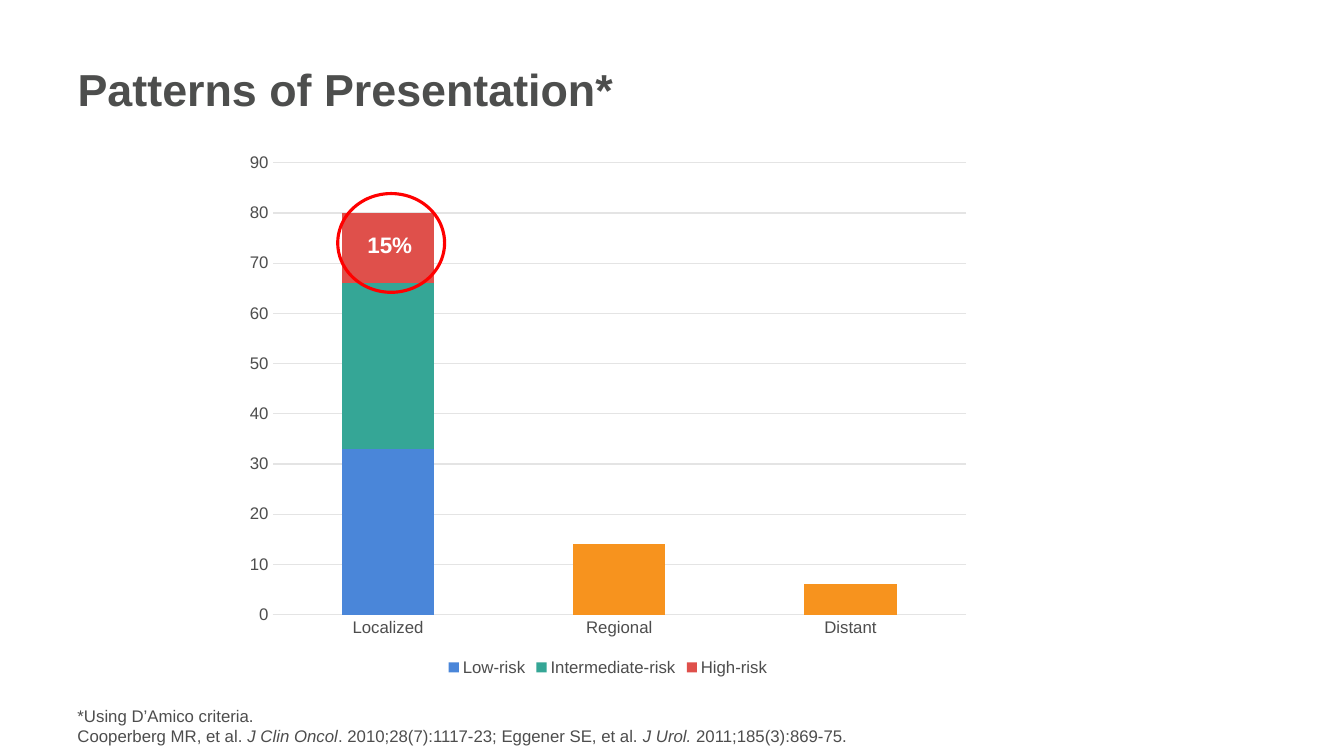
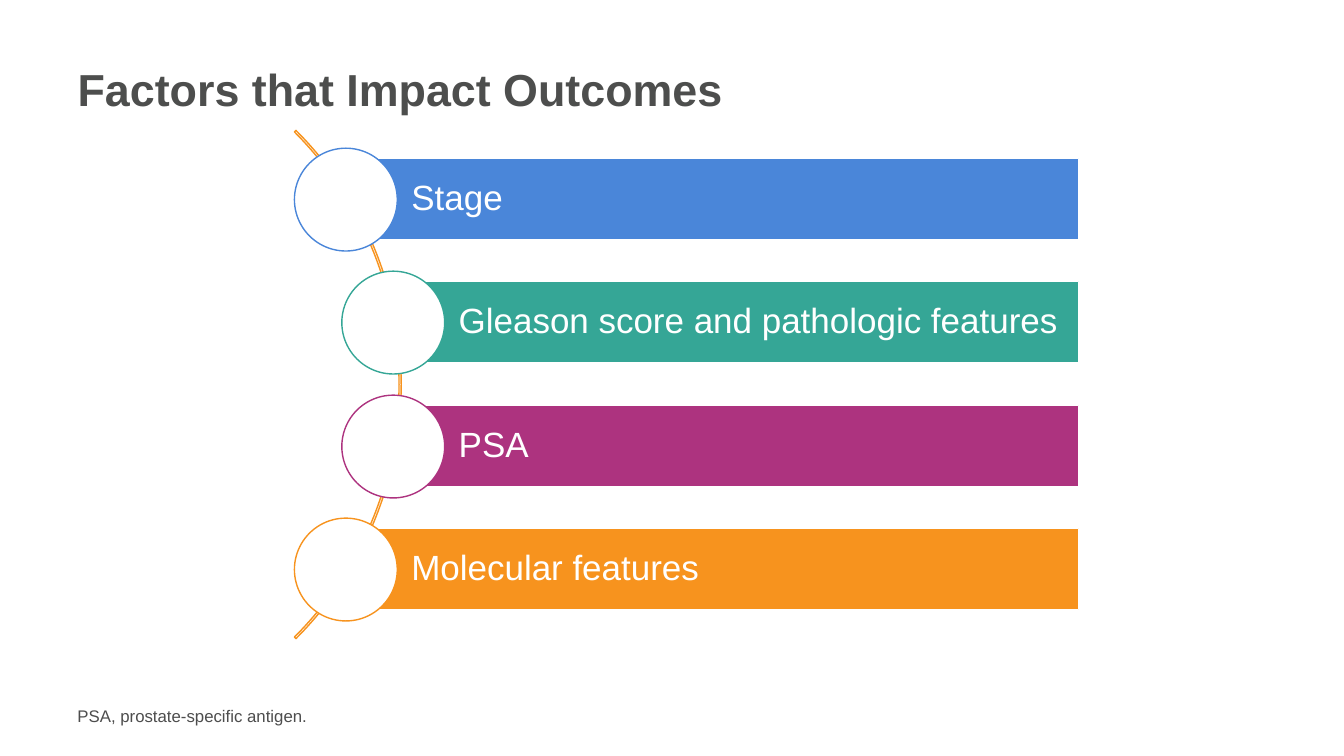
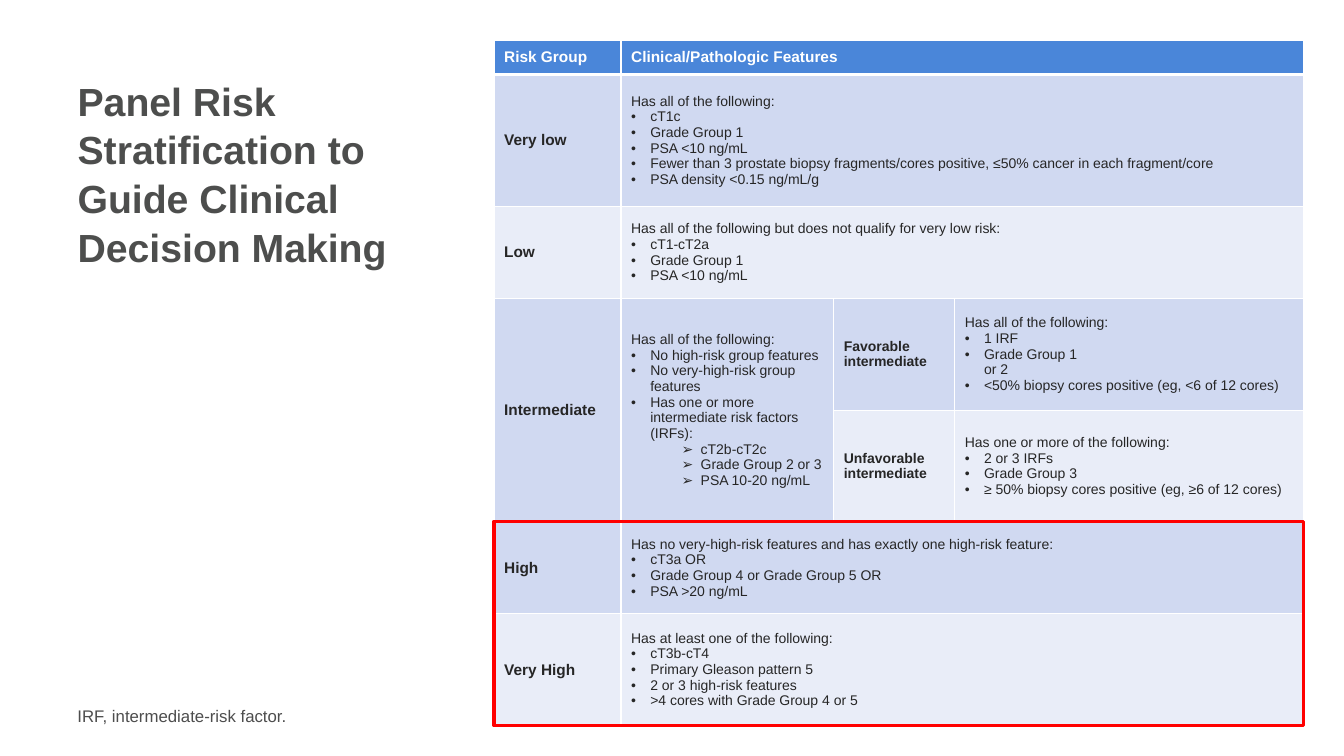
from copy import deepcopy

from pptx import Presentation
from pptx.chart.data import CategoryChartData
from pptx.dml.color import RGBColor
from pptx.enum.chart import XL_CHART_TYPE, XL_LEGEND_POSITION, XL_TICK_MARK
from pptx.enum.shapes import MSO_SHAPE
from pptx.enum.text import MSO_ANCHOR, MSO_AUTO_SIZE, PP_ALIGN
from pptx.oxml.ns import qn
from pptx.oxml.xmlchemy import OxmlElement
from pptx.util import Pt

# Shared look: 100 px to the inch
PX = 9144
FONT = "Arial"
COLORS = {
    "title": "4D4E4D", "text": "4D4D4D", "cell_text": "262626",
    "white": "FFFFFF", "grid": "E4E4E4", "ring": "FF0000",
    "blue": "4A86D9", "green": "35A696", "red": "DF504B",
    "purple": "AD337F", "orange": "F7931E",
    "band_dark": "D0D9F1", "band_light": "E9EDF8",
}
TITLE_BOX = (67, 22, 1175, 130)
NOTE_BOX = (67, 695, 1175, 48)
TITLE_FONT = {"size": 32, "bold": True, "color": "title"}
NOTE_FONT = {"size": 12, "color": "text"}
LABEL_FONT = {"size": 16, "bold": True, "color": "white"}
BAR_FONT = {"size": 25, "color": "white"}
HEAD_FONT = {"size": 11, "bold": True, "color": "white"}
GROUP_FONT = {"size": 11, "bold": True, "color": "cell_text"}
SUBGROUP_FONT = {"size": 10, "bold": True, "color": "cell_text"}
CELL_FONT = {"size": 10, "bold": False, "color": "cell_text"}

# Slide content
CATEGORIES = ("Localized", "Regional", "Distant")
SERIES = (
    ("Low-risk", (33, 14, 6), "blue"),
    ("Intermediate-risk", (33, None, None), "green"),
    ("High-risk", (14, None, None), "red"),
)
FACTORS = (
    ("Stage", 343, "blue"),
    ("Gleason score and pathologic features", 390, "green"),
    ("PSA", 390, "purple"),
    ("Molecular features", 343, "orange"),
)
COLUMN_WIDTHS = (126, 211, 120, 346)
ROW_HEIGHTS = (34, 131, 91, 111, 111, 91, 111)
MERGES = [((row, 1), (row, 3)) for row in (0, 1, 2, 5, 6)]
MERGES += [((3, column), (4, column)) for column in (0, 1)]
LIGHT_CELLS = {(row, column) for row in (2, 6) for column in range(4)}
LIGHT_CELLS |= {(4, 2), (4, 3)}
LABELS = (
    (0, 0, "Risk Group", HEAD_FONT),
    (0, 1, "Clinical/Pathologic Features", HEAD_FONT),
    (1, 0, "Very low", GROUP_FONT),
    (2, 0, "Low", GROUP_FONT),
    (3, 0, "Intermediate", GROUP_FONT),
    (5, 0, "High", GROUP_FONT),
    (6, 0, "Very High", GROUP_FONT),
    (3, 2, "Favorable\nintermediate", SUBGROUP_FONT),
    (4, 2, "Unfavorable\nintermediate", SUBGROUP_FONT),
)
FEATURES = (
    (1, 1, "Has all of the following:",
     ("cT1c", "Grade Group 1", "PSA <10 ng/mL",
      "Fewer than 3 prostate biopsy fragments/cores positive, "
      "≤50% cancer in each fragment/core",
      "PSA density <0.15 ng/mL/g"), ()),
    (2, 1, "Has all of the following but does not qualify for very low risk:",
     ("cT1-cT2a", "Grade Group 1", "PSA <10 ng/mL"), ()),
    (3, 1, "Has all of the following:",
     ("No high-risk group features", "No very-high-risk group features",
      "Has one or more intermediate risk factors (IRFs):"),
     ("cT2b-cT2c", "Grade Group 2 or 3", "PSA 10-20 ng/mL")),
    (3, 3, "Has all of the following:",
     ("1 IRF", "Grade Group 1\vor 2",
      "<50% biopsy cores positive (eg, <6 of 12 cores)"), ()),
    (4, 3, "Has one or more of the following:",
     ("2 or 3 IRFs", "Grade Group 3",
      "≥ 50% biopsy cores positive (eg, ≥6 of 12 cores)"), ()),
    (5, 1, "Has no very-high-risk features and has exactly one high-risk feature:",
     ("cT3a OR", "Grade Group 4 or Grade Group 5 OR", "PSA >20 ng/mL"), ()),
    (6, 1, "Has at least one of the following:",
     ("cT3b-cT4", "Primary Gleason pattern 5", "2 or 3 high-risk features",
      ">4 cores with Grade Group 4 or 5"), ()),
)


# Basic helpers
def color(name):
    return RGBColor.from_string(COLORS[name])


def place(*lengths):
    return [length * PX for length in lengths]


def set_all(target, values):
    for name, value in values.items():
        setattr(target, name, value)


def style_font(font, look):
    values = {**look, "name": FONT, "size": Pt(look["size"])}
    font.color.rgb = color(values.pop("color"))
    set_all(font, values)


def style_line(line, name, width):
    line.color.rgb = color(name)
    line.width = Pt(width)


# Text
def style_para(para, look):
    for span in para.runs:
        style_font(span.font, look)
    for line_break in para._p.findall(qn("a:br")):
        line_break.append(deepcopy(para.runs[0]._r.find(qn("a:rPr"))))


def write_lines(frame, text, look):
    frame.text = text
    for para in frame.paragraphs:
        style_para(para, look)


def add_bullet(para, mark, margin):
    props = para._p.get_or_add_pPr()
    props.set("marL", str(margin * PX))
    props.set("indent", str(-19 * PX))
    for tag, name, value in (("a:buFont", "typeface", FONT), ("a:buChar", "char", mark)):
        element = OxmlElement(tag)
        element.set(name, value)
        props.append(element)


def add_text(slide, box, text, look, **frame_values):
    frame = slide.shapes.add_textbox(*place(*box)).text_frame
    set_all(frame, {"word_wrap": True, **frame_values})
    write_lines(frame, text, look)
    return frame


def add_titled_slide(deck, text, box=TITLE_BOX, size=32):
    slide = deck.slides.add_slide(deck.slide_layouts[5])
    title = slide.shapes.title
    title.left, title.top, title.width, title.height = place(*box)
    set_all(title.text_frame, {"word_wrap": True, "auto_size": MSO_AUTO_SIZE.NONE,
                               "vertical_anchor": MSO_ANCHOR.MIDDLE})
    write_lines(title.text_frame, text, {**TITLE_FONT, "size": size})
    set_all(title.text_frame.paragraphs[0],
            {"alignment": PP_ALIGN.LEFT, "line_spacing": 1.04})
    return slide


# Shapes
def add_shape(slide, kind, box, fill, line, width=1):
    shape = slide.shapes.add_shape(kind, *place(*box))
    shape.shadow.inherit = False
    if fill:
        shape.fill.solid()
        shape.fill.fore_color.rgb = color(fill)
    else:
        shape.fill.background()
    style_line(shape.line, line, width)
    return shape


def add_factor(slide, text, left, top, name):
    bar = add_shape(slide, MSO_SHAPE.RECTANGLE, (left, top, 1070 - left, 81), name, "white")
    set_all(bar.text_frame, {
        "word_wrap": True, "vertical_anchor": MSO_ANCHOR.MIDDLE,
        "margin_left": 65 * PX, "margin_top": 7 * PX,
        "margin_right": 7 * PX, "margin_bottom": 7 * PX})
    write_lines(bar.text_frame, text, BAR_FONT)
    set_all(bar.text_frame.paragraphs[0], {"alignment": PP_ALIGN.LEFT, "line_spacing": 0.9})
    add_shape(slide, MSO_SHAPE.OVAL, (left - 51, top - 10, 102, 102), "white", name)


# Chart
def fill_solid(part, name):
    part.format.fill.solid()
    part.format.fill.fore_color.rgb = color(name)


def add_risk_chart(slide, box):
    data = CategoryChartData()
    data.categories = CATEGORIES
    for name, values, _ in SERIES:
        data.add_series(name, values)
    chart = slide.shapes.add_chart(XL_CHART_TYPE.COLUMN_STACKED, *place(*box), data).chart
    style_font(chart.font, NOTE_FONT)
    set_all(chart, {"has_title": False, "has_legend": True})
    set_all(chart.legend, {"position": XL_LEGEND_POSITION.BOTTOM, "include_in_layout": False})
    style_font(chart.legend.font, NOTE_FONT)

    plot = chart.plots[0]
    set_all(plot, {"gap_width": 150, "overlap": 100, "vary_by_categories": False})
    for series, (_, _, name) in zip(plot.series, SERIES):
        fill_solid(series, name)
    for index in (1, 2):
        fill_solid(plot.series[0].points[index], "orange")

    for axis in (chart.category_axis, chart.value_axis):
        set_all(axis, {"major_tick_mark": XL_TICK_MARK.NONE,
                       "minor_tick_mark": XL_TICK_MARK.NONE})
        style_font(axis.tick_labels.font, NOTE_FONT)
    style_line(chart.category_axis.format.line, "grid", 0.75)
    set_all(chart.value_axis, {"minimum_scale": 0, "maximum_scale": 90, "major_unit": 10})
    chart.value_axis.format.line.fill.background()
    style_line(chart.value_axis.major_gridlines.format.line, "grid", 0.75)


# Table
def add_border(cell, side, width):
    line = OxmlElement(f"a:ln{side}")
    line.set("w", str(Pt(width)))
    fill = OxmlElement("a:solidFill")
    shade = OxmlElement("a:srgbClr")
    shade.set("val", COLORS["white"])
    fill.append(shade)
    line.append(fill)
    cell._tc.get_or_add_tcPr().append(line)


def style_cell(cell, row, column):
    for side in "LRTB":
        under_header = (row, side) in ((0, "B"), (1, "T"))
        add_border(cell, side, 3 if under_header else 1)
    band = "band_light" if (row, column) in LIGHT_CELLS else "band_dark"
    cell.fill.solid()
    cell.fill.fore_color.rgb = color("blue" if row == 0 else band)
    cell.vertical_anchor = MSO_ANCHOR.MIDDLE


def write_features(frame, lead, points, sub_points):
    write_lines(frame, "\n".join((lead, *points, *sub_points)), CELL_FONT)
    for index, para in enumerate(frame.paragraphs[1:]):
        if index < len(points):
            add_bullet(para, "•", 19)
        else:
            para.level = 1
            add_bullet(para, "➢", 69)


def add_risk_table(slide, left, top):
    box = (left, top, sum(COLUMN_WIDTHS), sum(ROW_HEIGHTS))
    table = slide.shapes.add_table(len(ROW_HEIGHTS), len(COLUMN_WIDTHS), *place(*box)).table
    for column, width in zip(table.columns, COLUMN_WIDTHS):
        column.width = width * PX
    for row, height in zip(table.rows, ROW_HEIGHTS):
        row.height = height * PX
    for row in range(len(ROW_HEIGHTS)):
        for column in range(len(COLUMN_WIDTHS)):
            style_cell(table.cell(row, column), row, column)
    for first, last in MERGES:
        table.cell(*first).merge(table.cell(*last))
    for row, column, text, look in LABELS:
        write_lines(table.cell(row, column).text_frame, text, look)
    for row, column, *content in FEATURES:
        write_features(table.cell(row, column).text_frame, *content)


# Slides
def build_patterns(deck):
    slide = add_titled_slide(deck, "Patterns of Presentation*")
    add_risk_chart(slide, (233, 142, 740, 533))
    add_shape(slide, MSO_SHAPE.OVAL, (335, 192, 106, 98), None, "ring", 2.25)
    label = add_text(slide, (354, 224, 65, 37), "15%", LABEL_FONT, word_wrap=False)
    label.paragraphs[0].alignment = PP_ALIGN.CENTER
    note = add_text(slide, NOTE_BOX, "*Using D’Amico criteria.", NOTE_FONT)
    para = note.add_paragraph()
    citation = ("Cooperberg MR, et al. ", "J Clin Oncol",
                ". 2010;28(7):1117-23; Eggener SE, et al. ", "J Urol. ",
                "2011;185(3):869-75.")
    for index, text in enumerate(citation):
        span = para.add_run()
        span.text = text
        style_font(span.font, {**NOTE_FONT, "italic": index % 2 == 1})


def build_factors(deck):
    slide = add_titled_slide(deck, "Factors that Impact Outcomes")
    arc = add_shape(slide, MSO_SHAPE.BLOCK_ARC, (-315, 25, 713, 713), None, "orange")
    for index, value in enumerate((189, 27, 0.003)):
        arc.adjustments[index] = value
    for index, (text, left, name) in enumerate(FACTORS):
        add_factor(slide, text, left, 157 + round(index * 367 / 3), name)
    add_text(slide, NOTE_BOX, "PSA, prostate-specific antigen.", NOTE_FONT)


def build_stratification(deck):
    slide = add_titled_slide(
        deck, "Panel Risk Stratification to Guide Clinical Decision Making",
        (67, 56, 411, 231), 28)
    add_risk_table(slide, 490, 40)
    add_shape(slide, MSO_SHAPE.RECTANGLE, (490, 517, 803, 203), None, "ring", 2.25)
    add_text(slide, NOTE_BOX, "IRF, intermediate-risk factor.", NOTE_FONT)


def main():
    deck = Presentation()
    deck.slide_width, deck.slide_height = place(1333, 750)
    build_patterns(deck)
    build_factors(deck)
    build_stratification(deck)
    deck.save("out.pptx")


if __name__ == "__main__":
    main()
